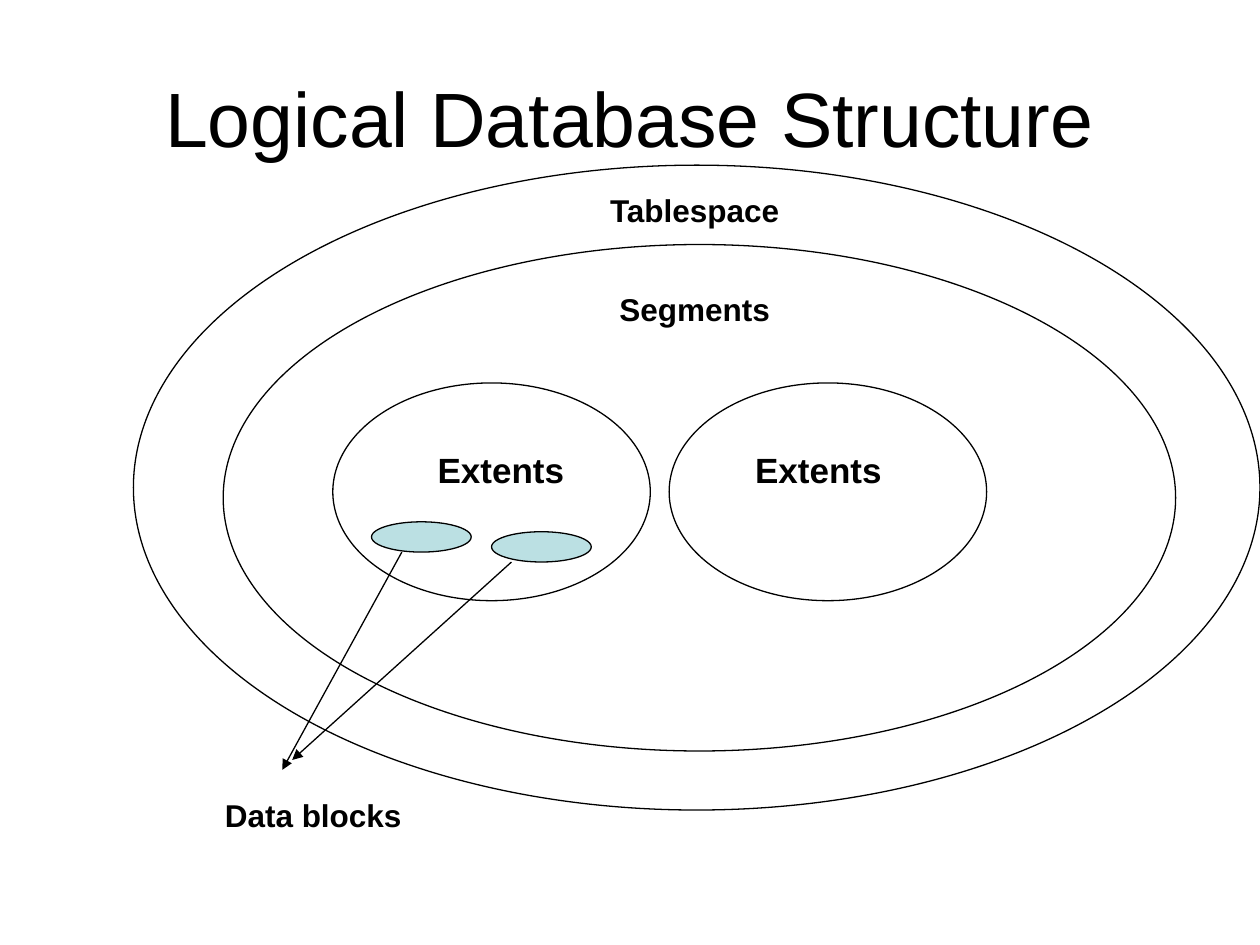
"""Build a slide of nested ellipses showing the logical structure of a database."""
from dataclasses import dataclass

from lxml import etree
from pptx import Presentation
from pptx.dml.color import RGBColor
from pptx.enum.shapes import MSO_CONNECTOR, MSO_SHAPE
from pptx.enum.text import MSO_ANCHOR, PP_ALIGN
from pptx.oxml.ns import qn
from pptx.util import Cm, Pt

ELLIPSE = MSO_SHAPE.OVAL
STRAIGHT = MSO_CONNECTOR.STRAIGHT
CENTER = PP_ALIGN.CENTER
TOP = MSO_ANCHOR.TOP
MIDDLE = MSO_ANCHOR.MIDDLE


@dataclass(frozen=True)
class Theme:
    font: str = "Arial"
    ink: RGBColor = RGBColor(0x00, 0x00, 0x00)
    block_fill: RGBColor = RGBColor(0xBB, 0xE0, 0xE3)
    line_width: float = 0.75
    title_size: int = 44
    extent_size: int = 20
    label_size: int = 18


class DiagramSlide:
    def __init__(self, slide, theme):
        self.slide = slide
        self.theme = theme

    def style_line(self, line):
        line.color.rgb = self.theme.ink
        line.width = Pt(self.theme.line_width)

    def ellipse(self, left, top, width, height, fill=None):
        shape = self.slide.shapes.add_shape(
            ELLIPSE, Cm(left), Cm(top), Cm(width), Cm(height))
        shape.shadow.inherit = False
        if fill is None:
            shape.fill.background()
        else:
            shape.fill.solid()
            shape.fill.fore_color.rgb = fill
        self.style_line(shape.line)

    def arrow(self, start, end):
        connector = self.slide.shapes.add_connector(
            STRAIGHT, *(Cm(value) for value in (*start, *end)))
        self.style_line(connector.line)
        line_element = connector.line._get_or_add_ln()
        etree.SubElement(line_element, qn("a:tailEnd"), type="triangle")
        etree.SubElement(connector._element.spPr, qn("a:effectLst"))

    def text(self, wording, left, top, width, height, size, bold=True, anchor=TOP):
        shape = self.slide.shapes.add_textbox(
            Cm(left), Cm(top), Cm(width), Cm(height))
        text_frame = shape.text_frame
        text_frame.word_wrap = True
        text_frame.vertical_anchor = anchor
        text_frame.text = wording
        paragraph = text_frame.paragraphs[0]
        paragraph.alignment = CENTER
        font = paragraph.runs[0].font
        font.name = self.theme.font
        font.size = Pt(size)
        font.bold = bold
        font.color.rgb = self.theme.ink


def main():
    presentation = Presentation()
    presentation.slide_width = Cm(25.4)
    presentation.slide_height = Cm(19.05)
    theme = Theme()
    diagram = DiagramSlide(
        presentation.slides.add_slide(presentation.slide_layouts[6]), theme)

    diagram.text("Logical Database Structure", 1.27, 0.76, 22.86, 3.18,
                 theme.title_size, bold=False, anchor=MIDDLE)

    for left, top in ((7.49, 10.52), (9.91, 10.72)):
        diagram.ellipse(left, top, 2.01, 0.61, theme.block_fill)
    for ellipse_left, label_left in ((6.71, 7.7), (13.49, 14.1)):
        diagram.ellipse(ellipse_left, 7.72, 6.4, 4.39)
        diagram.text("Extents", label_left, 8.92, 4.8, 1.09, theme.extent_size)
    diagram.ellipse(4.5, 4.93, 19.2, 10.21)
    diagram.ellipse(2.69, 3.33, 22.71, 13)

    diagram.arrow((8.1, 11.13), (5.69, 15.52))
    diagram.arrow((10.31, 11.33), (5.89, 15.32))

    for wording, left, top, width in (
        ("Tablespace", 11.3, 3.73, 5.41),
        ("Segments", 11.3, 5.72, 5.41),
        ("Data blocks", 3.71, 15.93, 5.21),
    ):
        diagram.text(wording, left, top, width, 1.02, theme.label_size)

    presentation.save("out.pptx")


if __name__ == "__main__":
    main()
